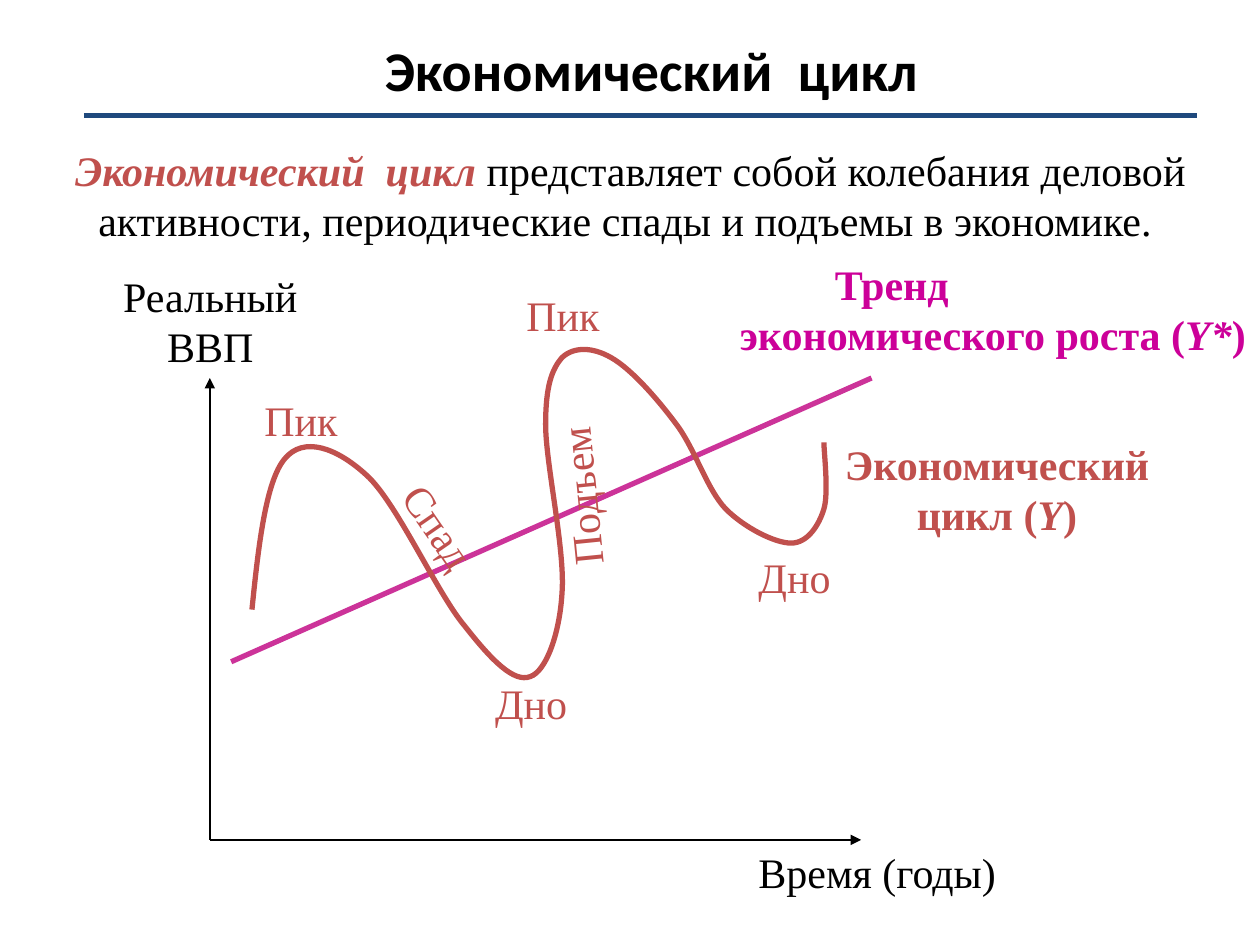
from lxml.etree import SubElement
from pptx import Presentation
from pptx.dml.color import RGBColor
from pptx.enum.shapes import MSO_CONNECTOR
from pptx.enum.text import MSO_ANCHOR, MSO_AUTO_SIZE, PP_ALIGN
from pptx.oxml.ns import qn
from pptx.util import Cm, Pt

BLACK, RED, MAGENTA = "000000", "C0504D", "CC0099"
color = RGBColor.from_string

presentation = Presentation()
presentation.slide_width, presentation.slide_height = Cm(25.4), Cm(19.05)
slide = presentation.slides.add_slide(presentation.slide_layouts[5])
shapes = slide.shapes


def add_run(paragraph, text, hex_color, style="", font="Times New Roman", size=24):
    """Style holds "b" for bold and "i" for italic."""
    run = paragraph.add_run()
    run.text = text
    run.font.name, run.font.size = font, Pt(size)
    run.font.bold, run.font.italic = "b" in style, "i" in style
    run.font.color.rgb = color(hex_color)


def add_line(start, end, hex_color, width, arrow=False):
    line = shapes.add_connector(MSO_CONNECTOR.STRAIGHT, *map(Cm, start + end))
    line.line.color.rgb = color(hex_color)
    line.line.width = Pt(width)
    properties = line._element.spPr
    if arrow:
        SubElement(properties.find(qn("a:ln")), qn("a:tailEnd"), type="triangle")
    SubElement(properties, qn("a:effectLst"))


# Title
title = shapes.title
title.left, title.top, title.width, title.height = Cm(2.34), Cm(-0.2), Cm(21.59), Cm(3.18)
title.text_frame.vertical_anchor = MSO_ANCHOR.MIDDLE
title_paragraph = title.text_frame.paragraphs[0]
title_paragraph.alignment = PP_ALIGN.CENTER
add_run(title_paragraph, "Экономический  цикл", BLACK, "b", "Calibri", 32)

# Axes, trend and title rule
origin = (4.23, 16.93)
add_line(origin, (4.23, 7.62), BLACK, 1.5, arrow=True)
add_line(origin, (17.36, 16.93), BLACK, 1.5, arrow=True)
add_line((4.66, 13.34), (17.57, 7.62), "CC3399", 3)
add_line((1.69, 2.33), (24.13, 2.33), "1F497D", 3)

# Cycle curve: a start point, then two control points and an end point per row
curve_start = (5.08, 12.29)
curve_segments = [
    [(5.21, 11), (5.36, 9.7), (5.74, 9.25)],
    [(6.12, 8.79), (6.78, 9.02), (7.39, 9.58)],
    [(8, 10.13), (8.81, 11.96), (9.37, 12.62)],
    [(9.91, 13.31), (10.36, 13.77), (10.69, 13.64)],
    [(11, 13.54), (11.28, 12.8), (11.33, 11.96)],
    [(11.4, 11.1), (11, 9.35), (11, 8.56)],
    [(11, 7.77), (11.13, 7.44), (11.33, 7.21)],
    [(11.56, 6.99), (11.94, 6.99), (12.32, 7.21)],
    [(12.73, 7.44), (13.26, 8.05), (13.64, 8.56)],
    [(14.02, 9.07), (14.25, 9.86), (14.63, 10.26)],
    [(15.01, 10.64), (15.62, 10.95), (15.95, 10.95)],
    [(16.28, 10.95), (16.51, 10.59), (16.61, 10.26)],
    [(16.71, 9.93), (16.61, 9.12), (16.61, 8.92)],
]
builder = shapes.build_freeform(*map(Cm, curve_start))
builder.add_line_segments(
    [(Cm(x), Cm(y)) for segment in curve_segments for x, y in segment], close=False)
curve = builder.convert_to_shape()
curve.shadow.inherit = False
curve.fill.background()
curve.line.color.rgb = color(RED)
curve.line.width = Pt(3)

# Turn every three straight steps into one Bézier segment
outline = curve._element.spPr.find(".//" + qn("a:path"))
steps = outline.findall(qn("a:lnTo"))
for first in range(0, len(steps), 3):
    bezier = SubElement(outline, qn("a:cubicBezTo"))
    for step in steps[first:first + 3]:
        bezier.append(step[0])
        outline.remove(step)

# Text boxes: left, top, width, height, rotation, alignment, paragraphs of runs
LEFT, CENTER = PP_ALIGN.LEFT, PP_ALIGN.CENTER
text_boxes = [
    (0.43, 2.79, 24.56, 2.29, 0, CENTER, [[
        ("Экономический  цикл", RED, "bi"),
        (" представляет собой колебания деловой активности, "
         "периодические спады и подъемы в экономике. ", BLACK)]]),
    (1.7, 5.33, 5.08, 2.29, 0, CENTER, [[("Реальный ВВП", BLACK)]]),
    (15.04, 16.94, 7.19, 1.27, 0, LEFT, [[("Время (годы)", BLACK)]]),
    (5.08, 7.82, 2.74, 1.27, 0, LEFT, [[("Пик", RED)]]),
    (10.36, 5.72, 2.74, 1.27, 0, LEFT, [[("Пик", RED)]]),
    (15.04, 11, 3.18, 1.27, 0, LEFT, [[("Дно", RED)]]),
    (9.73, 13.54, 3.18, 1.27, 0, LEFT, [[("Дно", RED)]]),
    (7.24, 10.85, 4.45, 1.27, 55.4, LEFT, [[("Спад", RED)]]),
    (9.42, 8.79, 4.45, 1.27, 264.3, LEFT, [[("Подъем", RED)]]),
    (16.71, 8.71, 6.78, 3.81, 0, CENTER, [[
        ("Экономический цикл (", RED, "b"), ("Y", RED, "bi"), (")", RED, "b")]]),
    (14.4, 5.08, 11.23, 4.06, 0, CENTER, [
        [("Тренд", MAGENTA, "b")],
        [("экономического роста (", MAGENTA, "b"), ("Y*", MAGENTA, "bi"),
         (")", MAGENTA, "b")]]),
]
for left, top, width, height, rotation, alignment, paragraphs in text_boxes:
    box = shapes.add_textbox(Cm(left), Cm(top), Cm(width), Cm(height))
    box.rotation = rotation
    frame = box.text_frame
    frame.word_wrap = True
    frame.auto_size = MSO_AUTO_SIZE.SHAPE_TO_FIT_TEXT
    for index, runs in enumerate(paragraphs):
        paragraph = frame.add_paragraph() if index else frame.paragraphs[0]
        paragraph.alignment = alignment
        for run in runs:
            add_run(paragraph, *run)

# The first line of the trend label, the last box, sits left of its centre
trend_heading = frame.paragraphs[0]
trend_heading.alignment = LEFT
trend_heading._p.get_or_add_pPr().set("marL", str(Cm(2.18)))

presentation.save("out.pptx")
